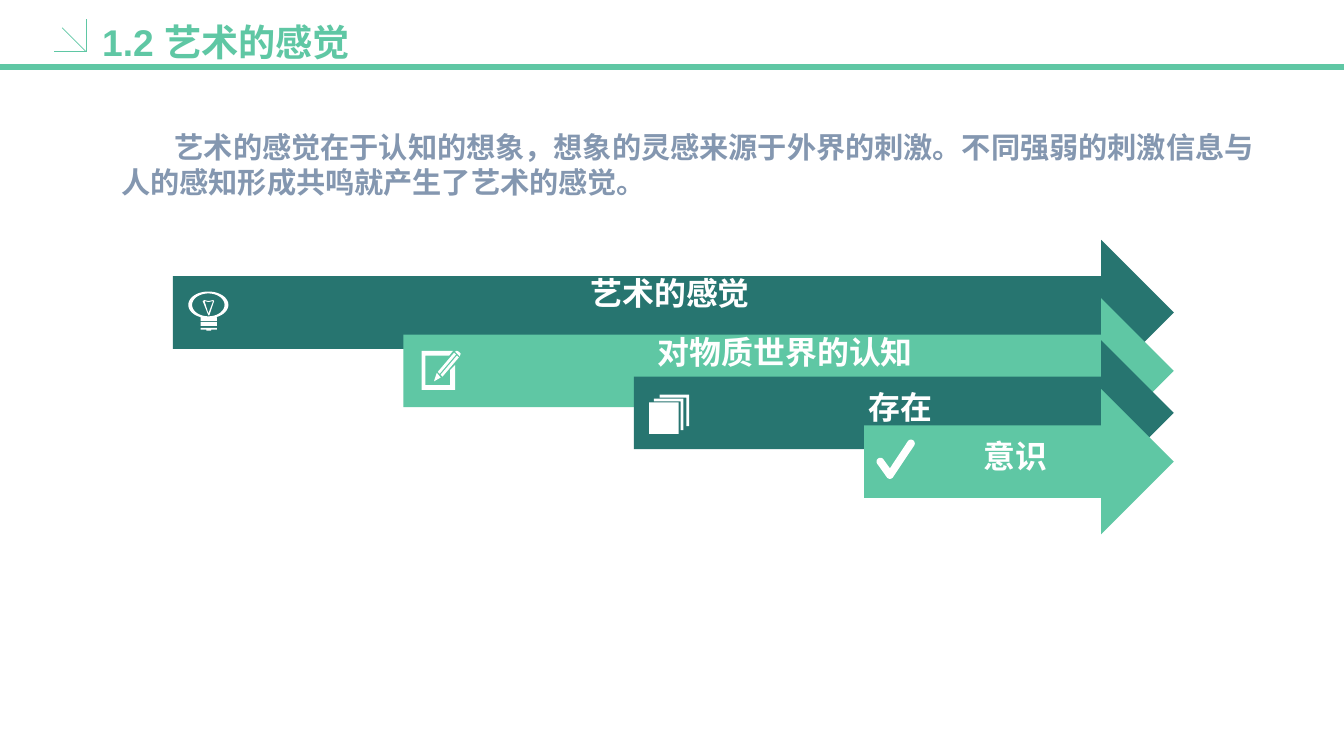
from math import cos, radians, sin
from typing import NamedTuple

from lxml.etree import SubElement
from pptx import Presentation
from pptx.dml.color import RGBColor
from pptx.enum.shapes import MSO_CONNECTOR, MSO_SHAPE
from pptx.enum.text import MSO_ANCHOR as ANCHOR, PP_ALIGN as ALIGN
from pptx.oxml.ns import qn
from pptx.util import Inches, Pt

MINT = RGBColor(0x5F, 0xC7, 0xA4)
TEAL = RGBColor(0x27, 0x75, 0x70)
SLATE = RGBColor(0x84, 0x97, 0xB0)
WHITE = RGBColor(0xFF, 0xFF, 0xFF)

# Arrow geometry shared by all four levels
HEAD_X, TIP_X = 11.52, 12.28
HEAD_HALF, SHAFT_HALF = 0.76, 0.38
FIRST_LEFT, LEFT_STEP = 1.81, 2.41


class Arrow(NamedTuple):
    label: str
    mid: float
    color: RGBColor
    font: str
    top_inset: float


ARROWS = [
    Arrow("艺术的感觉", 3.27, TEAL, "Calibri", 0.13),
    Arrow("对物质世界的认知", 3.88, MINT, "Calibri", 0.13),
    Arrow("存在", 4.32, TEAL, "Arial", 0.41),
    Arrow("意识", 4.83, MINT, "Arial", 0.41),
]


def write_text(sp, text, *, size, color, font, align=ALIGN.LEFT,
               anchor=ANCHOR.TOP, insets=(0.1, 0.05, 0.1, 0.05),
               spacing=1.0, indent=0):
    tf = sp.text_frame
    tf.word_wrap = True
    tf.vertical_anchor = anchor
    (tf.margin_left, tf.margin_top,
     tf.margin_right, tf.margin_bottom) = map(Inches, insets)
    p = tf.paragraphs[0]
    p.alignment = align
    p.line_spacing = spacing
    if indent:
        p._p.get_or_add_pPr().set("indent", str(Inches(indent)))
    r = p.add_run()
    r.text = text
    r.font.name = font
    r.font.size = Pt(size)
    r.font.bold = True
    r.font.color.rgb = color


def add_text(shapes, box, text, **style):
    sp = shapes.add_textbox(*map(Inches, box))
    write_text(sp, text, **style)


def paint(sp, color):
    sp.shadow.inherit = False
    sp.fill.solid()
    sp.fill.fore_color.rgb = color
    sp.line.fill.background()
    return sp


def add_outline(shapes, outer, *holes, color=WHITE):
    """Fill a closed outline, leaving any holes open."""
    builder = shapes.build_freeform(*map(Inches, outer[0]))
    for contour in (outer, *holes):
        start, *rest = [(Inches(x), Inches(y)) for x, y in contour]
        if contour is not outer:
            builder.move_to(*start)
        builder.add_line_segments(rest, close=True)
    return paint(builder.convert_to_shape(), color)


def add_rect(shapes, x, y, w, h):
    sp = shapes.add_shape(MSO_SHAPE.RECTANGLE, *map(Inches, (x, y, w, h)))
    paint(sp, WHITE)


def add_line(shapes, start, end, width):
    line = shapes.add_connector(MSO_CONNECTOR.STRAIGHT,
                                *map(Inches, (*start, *end)))
    line.line.color.rgb = MINT
    line.line.width = Pt(width)
    SubElement(line._element.spPr, qn("a:effectLst"))


def arc(center, rx, ry, start, end, steps=36):
    """Points along an ellipse, in degrees clockwise from the right."""
    cx, cy = center
    angles = [radians(start + (end - start) * i / steps)
              for i in range(steps + 1)]
    return [(cx + rx * cos(a), cy + ry * sin(a)) for a in angles]


def shift(points, dx, dy):
    return [(x + dx, y + dy) for x, y in points]


def add_header(shapes):
    add_line(shapes, (0, 0.7), (14.06, 0.7), 4.5)
    corner = shapes.add_group_shape().shapes
    for end in [(0.57, 0.54), (0.9, 0.2), (0.65, 0.29)]:
        add_line(corner, (0.9, 0.54), end, 0.5)
    add_text(shapes, (0.97, 0.15, 3.72, 0.47), "1.2 艺术的感觉", size=28,
             color=MINT, font="Arial", anchor=ANCHOR.MIDDLE, spacing=1.2)


def add_arrow(shapes, left, arrow):
    upper_half = [(left, -SHAFT_HALF), (HEAD_X, -SHAFT_HALF),
                  (HEAD_X, -HEAD_HALF)]
    lower_half = [(x, -y) for x, y in reversed(upper_half)]
    outline = shift(upper_half + [(TIP_X, 0)] + lower_half, 0, arrow.mid)
    sp = add_outline(shapes, outline, color=arrow.color)
    write_text(sp, arrow.label, size=24, color=WHITE, font=arrow.font,
               align=ALIGN.CENTER, anchor=ANCHOR.MIDDLE, spacing=1.2,
               insets=(0.59, arrow.top_inset, 0.66, 0.62))


def add_bulb(shapes):
    icon = shapes.add_group_shape().shapes
    center = (2.18, 3.19)
    left, right = 2.1, 2.27

    # Glass, open at the bottom where the neck joins
    glass = arc(center, 0.21, 0.14, 112, 428)
    neck = [(right, 3.32), (right, 3.36), (left, 3.36), (left, 3.32)]
    hollow = arc(center, 0.17, 0.12, 360, 0)
    add_outline(icon, glass + neck, hollow)

    # Screw base
    add_rect(icon, left, 3.37, right - left, 0.04)
    add_outline(icon, [(left, 3.43), (right, 3.43), (right, 3.45),
                       (2.21, 3.45), (2.21, 3.46), (2.16, 3.46),
                       (2.16, 3.45), (left, 3.45)])

    # Filament
    filament = [(2.12, 3.15), (2.14, 3.14), (2.18, 3.15), (2.23, 3.14),
                (2.24, 3.15), (2.19, 3.3), (2.18, 3.3)]
    gap = [(2.18, 3.28), (2.23, 3.15), (2.18, 3.16), (2.14, 3.15)]
    add_outline(icon, filament, gap)


def add_notepad(shapes):
    icon = shapes.add_group_shape().shapes
    point = [(4.61, 3.95), (4.57, 3.9), (4.54, 3.99)]
    barrel = [(4.75, 3.69), (4.58, 3.89), (4.6, 3.91), (4.77, 3.71)]
    eraser = [(4.76, 3.68), (4.78, 3.67), (4.8, 3.68), (4.82, 3.7),
              (4.81, 3.73)]
    page = [(4.71, 4.03), (4.45, 4.03), (4.45, 3.72), (4.7, 3.72),
            (4.74, 3.67), (4.41, 3.67), (4.41, 4.08), (4.76, 4.08),
            (4.76, 3.82), (4.71, 3.87)]
    for part in (point, barrel, shift(barrel, 0.03, 0.03), eraser, page):
        add_outline(icon, part)


def add_pages(shapes):
    icon = shapes.add_group_shape().shapes
    w, h, edge = 0.31, 0.33, 0.03
    back_page = [(0, 0), (w, 0), (w, h), (w - edge, h), (w - edge, edge),
                 (0, edge)]
    for x, y in [(6.84, 4.17), (6.9, 4.13)]:
        add_outline(icon, shift(back_page, x, y))
    add_rect(icon, 6.79, 4.21, w, h)


def add_check(shapes):
    r = 0.04
    short_end = arc((9.21, 4.83), r, r, 144, 324)
    inner_corner = [(9.31, 4.9)]
    long_end = arc((9.53, 4.64), r, r, 214, 394)
    bottom = arc((9.31, 4.97), r, r, 34, 144)
    add_outline(shapes, short_end + inner_corner + long_end + bottom)


def main():
    prs = Presentation()
    prs.slide_width, prs.slide_height = Inches(14.06), Inches(7.91)
    shapes = prs.slides.add_slide(prs.slide_layouts[6]).shapes

    add_header(shapes)

    # Stepped arrows
    for i, arrow in enumerate(ARROWS):
        add_arrow(shapes, FIRST_LEFT + i * LEFT_STEP, arrow)

    # Icons
    for add_icon in (add_check, add_pages, add_bulb, add_notepad):
        add_icon(shapes)

    # Introduction
    add_text(shapes, (1.17, 1.3, 12.19, 0.84),
             "艺术的感觉在于认知的想象，想象的灵感来源于外界的刺激。"
             "不同强弱的刺激信息与人的感知形成共鸣就产生了艺术的感觉。",
             size=22, color=SLATE, font="Calibri", indent=0.56)

    prs.save("out.pptx")


if __name__ == "__main__":
    main()
